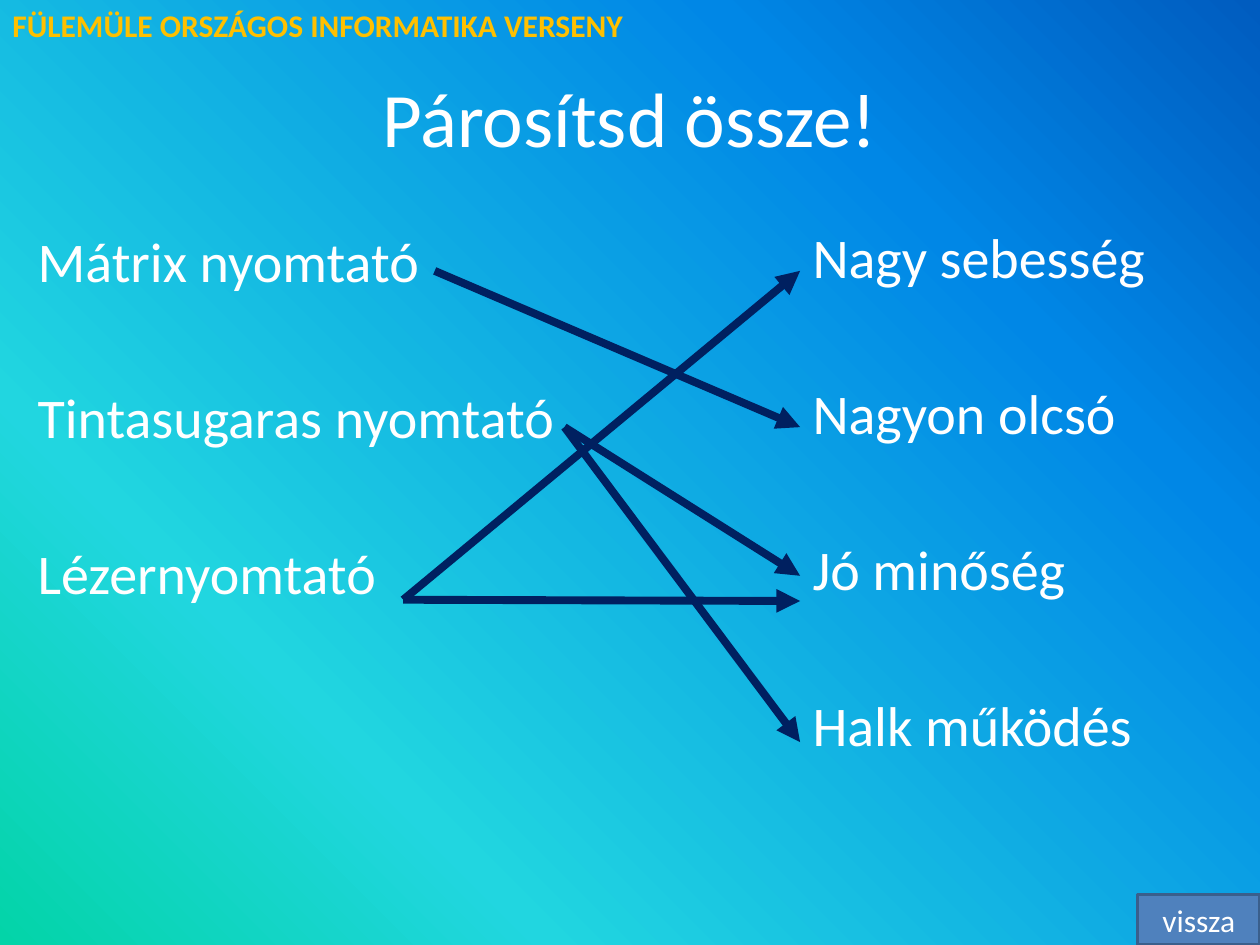
from copy import deepcopy
from lxml import etree
from pptx import Presentation
from pptx.dml.color import RGBColor
from pptx.enum.shapes import MSO_CONNECTOR, MSO_SHAPE
from pptx.enum.text import MSO_ANCHOR, MSO_AUTO_SIZE, PP_ALIGN
from pptx.oxml.ns import qn
from pptx.util import Inches, Pt

LINE, BUTTON = MSO_CONNECTOR.STRAIGHT, MSO_SHAPE.ACTION_BUTTON_CUSTOM
MIDDLE, TOP = MSO_ANCHOR.MIDDLE, MSO_ANCHOR.TOP
CENTER, LEFT = PP_ALIGN.CENTER, PP_ALIGN.LEFT
W, H = 10, 7.5

# Content
HEAD = "FÜLEMÜLE ORSZÁGOS INFORMATIKA VERSENY"
TITLE = "Párosítsd össze!"
TYPES = ["Mátrix nyomtató", "Tintasugaras nyomtató", "Lézernyomtató"]
TRAITS = ["Nagy sebesség", "Nagyon olcsó", "Jó minőség", "Halk működés"]
BACK = "vissza"
STARTS = [(3.45, 2.15), (4.48, 3.39), (3.2, 4.76)]  # beside each type
EDGE = 6.35  # left side of the traits
PAIRS = [(0, 3.39), (1, 5.89), (2, 2.15), (1, 4.57), (2, 4.77)]  # type, end height

COLORS = {"text": "FFFFFF", "head": "FFC000", "arrow": "002060",
          "button": "4F81BD", "rim": "3A5F8C"}
STOPS = [(0, "03D4A8"), (25, "21D6E0"), (75, "0087E6"), (100, "005CBF")]
ROW_GAP = 50.6  # points between the rows of a list


def color(key):
    return RGBColor.from_string(COLORS[key])


def write(shape, lines, size, tone="text", bold=False, align=LEFT, anchor=TOP, gap=0):
    frame = shape.text_frame
    frame.text = "\n".join(lines)
    frame.word_wrap, frame.vertical_anchor = True, anchor
    for i, para in enumerate(frame.paragraphs):
        para.alignment = align
        para.space_before = Pt(gap if i else 0)
        look = {"name": "Calibri", "size": Pt(size), "bold": bold}
        for font in (run.font for run in para.runs):
            for key, val in look.items():
                setattr(font, key, val)
            font.color.rgb = color(tone)


def add_box(slide, *place):
    return slide.shapes.add_textbox(*map(Inches, place))


def paint(slide):
    fill = slide.background.fill
    fill.gradient()
    fill.gradient_angle = 45
    stops = slide._element.find(".//" + qn("a:gsLst"))
    base = deepcopy(stops[0])
    for old in list(stops):
        stops.remove(old)
    for _ in STOPS:
        stops.append(deepcopy(base))
    for stop, (share, tone) in zip(fill.gradient_stops, STOPS):
        stop.position = share / 100
        stop.color.rgb = RGBColor.from_string(tone)


def add_arrow(slide, start, end):
    arrow = slide.shapes.add_connector(LINE, *map(Inches, start + end))
    arrow.line.color.rgb, arrow.line.width = color("arrow"), Pt(4.5)
    etree.SubElement(arrow.line._get_or_add_ln(), qn("a:tailEnd"), type="triangle")
    etree.SubElement(arrow._element.spPr, qn("a:effectLst"))


def main():
    deck = Presentation()
    deck.slide_width, deck.slide_height = Inches(W), Inches(H)
    slide = deck.slides.add_slide(deck.slide_layouts[5])
    paint(slide)

    # Heading and title
    head = add_box(slide, 0, 0, 5.16, 0.4)
    write(head, [HEAD], 18, "head", bold=True)
    head.text_frame.auto_size = MSO_AUTO_SIZE.SHAPE_TO_FIT_TEXT
    title = slide.shapes.title
    place = {"left": 0.5, "top": 0.3, "width": 9, "height": 1.25}
    for key, val in place.items():
        setattr(title, key, Inches(val))
    write(title, [TITLE], 44, align=CENTER, anchor=MIDDLE)

    # Two lists to match
    write(add_box(slide, 0.2, 1.75, 4.73, 4.95), TYPES, 32, gap=ROW_GAP)
    write(add_box(slide, EDGE, 1.72, 3.39, 4.95), TRAITS, 32, gap=ROW_GAP)

    # Matching arrows
    for row, y in PAIRS:
        add_arrow(slide, STARTS[row], (EDGE, y))

    # Back button in the corner
    wide, high = 0.97, 0.4
    place = map(Inches, (W - wide, H - high, wide, high))
    button = slide.shapes.add_shape(BUTTON, *place)
    button.shadow.inherit = False
    button.fill.solid()
    button.fill.fore_color.rgb = color("button")
    button.line.color.rgb, button.line.width = color("rim"), Pt(2)
    write(button, [BACK], 18, align=CENTER, anchor=MIDDLE)

    deck.save("out.pptx")


if __name__ == "__main__":
    main()
